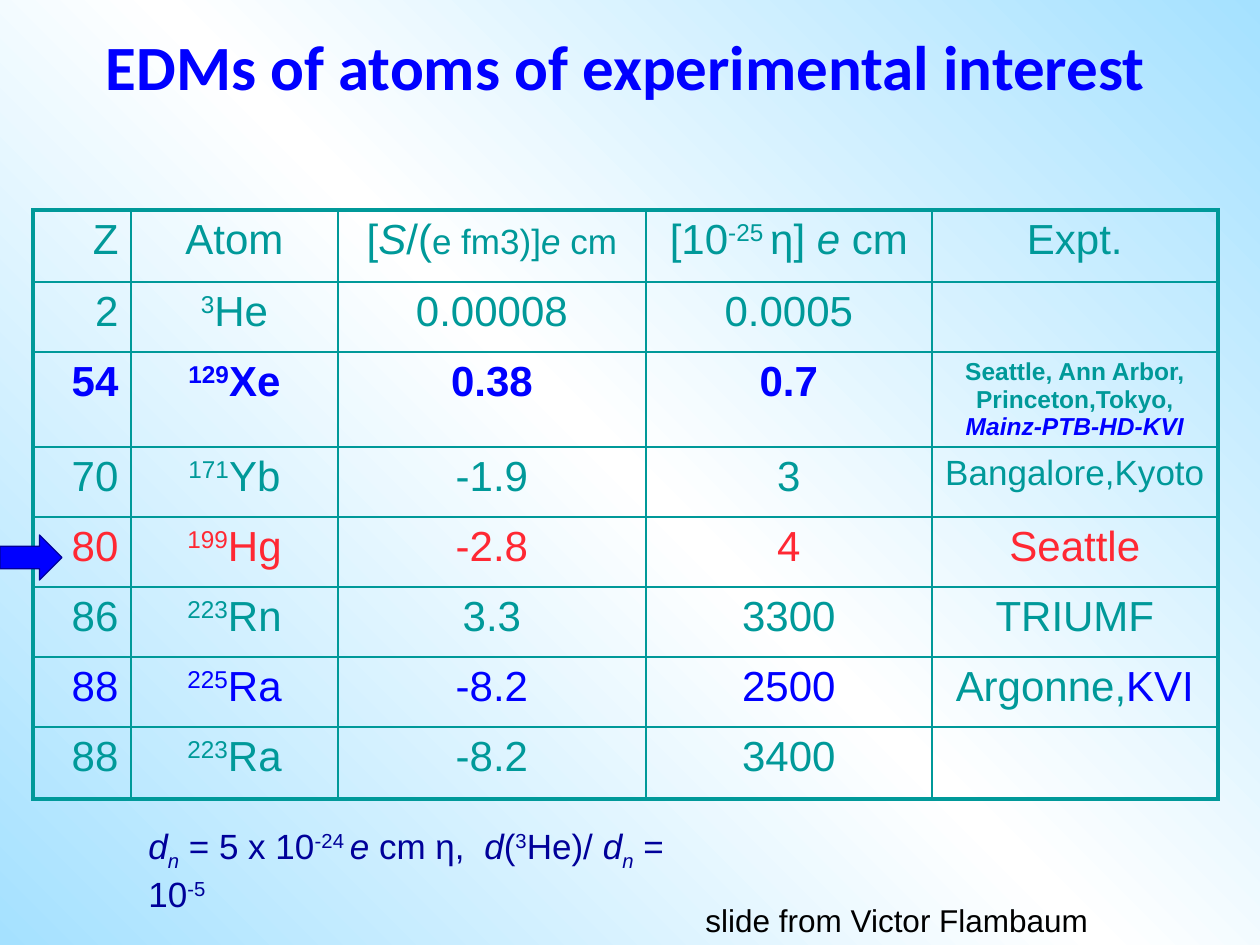
from copy import deepcopy
from dataclasses import dataclass

from lxml.etree import SubElement
from pptx import Presentation
from pptx.dml.color import RGBColor as Rgb
from pptx.enum.shapes import MSO_SHAPE as Preset
from pptx.enum.text import MSO_ANCHOR as Anchor
from pptx.enum.text import MSO_AUTO_SIZE as Fit
from pptx.enum.text import PP_ALIGN as Align
from pptx.oxml.ns import qn
from pptx.util import Emu, Pt

PX_PER_INCH = 126


def px(length):
    return Emu(round(length * 914400 / PX_PER_INCH))


@dataclass(frozen=True)
class Theme:
    sky: str = "A5E1FF"
    white: str = "FFFFFF"
    teal: str = "009999"
    blue: str = "0000FF"
    navy: str = "000099"
    red: str = "FF2833"
    black: str = "000000"
    heading: str = "Calibri"
    body: str = "Arial"
    title_size: int = 36
    cell_size: int = 24
    small_size: int = 20
    credit_size: int = 18
    tiny_size: int = 14
    grid_line: float = 1
    frame_line: float = 2.25
    arrow_line: float = 0.75


THEME = Theme()
ITALIC = {"italic": True}
SUPER = {"baseline": 30}
SUB = {"italic": True, "baseline": -25}
SMALL = {"size": THEME.small_size}
SMALL_ITALIC = {**SMALL, **ITALIC}


class SlideBuilder:
    def __init__(self, slide, theme):
        self.slide = slide
        self.theme = theme

    def background(self):
        theme = self.theme
        fill = self.slide.background.fill
        fill.gradient()
        fill.gradient_angle = 45
        stop_list = self.slide.element.find(".//" + qn("a:gsLst"))
        stop_list.append(deepcopy(stop_list[-1]))
        shades = (theme.sky, theme.white, theme.sky)
        for stop, position, shade in zip(fill.gradient_stops, (0, 0.5, 1), shades):
            stop.position = position
            stop.color.rgb = Rgb.from_string(shade)

    def add_runs(self, paragraph, runs, **base):
        for words, changes in runs:
            values = {"name": self.theme.body, **base, **changes}
            baseline = values.pop("baseline", 0)
            color = values.pop("color")
            values["size"] = Pt(values["size"])
            run = paragraph.add_run()
            run.text = words
            for attribute, value in values.items():
                setattr(run.font, attribute, value)
            run.font.color.rgb = Rgb.from_string(color)
            if baseline:
                run._r.get_or_add_rPr().set("baseline", str(baseline * 1000))

    def title(self, words, left, top, width, height):
        title = self.slide.shapes.title
        title.left, title.top, title.width, title.height = map(px, (left, top, width, height))
        frame = title.text_frame
        frame.auto_size = Fit.NONE
        frame.vertical_anchor = Anchor.TOP
        paragraph = frame.paragraphs[0]
        paragraph.alignment = Align.CENTER
        paragraph.line_spacing = 0.7
        self.add_runs(paragraph, [(words, {})], name=self.theme.heading,
                      size=self.theme.title_size, color=self.theme.blue, bold=True)

    def text(self, runs, left, top, width, height, **base):
        frame = self.slide.shapes.add_textbox(*map(px, (left, top, width, height))).text_frame
        frame.word_wrap = True
        frame.auto_size = Fit.SHAPE_TO_FIT_TEXT
        self.add_runs(frame.paragraphs[0], runs, **base)

    def borders(self, cell, outer_sides):
        properties = cell._tc.get_or_add_tcPr()
        for side in "LRTB":
            width = self.theme.frame_line if side in outer_sides else self.theme.grid_line
            line = SubElement(properties, qn(f"a:ln{side}"), w=str(Pt(width)))
            color = SubElement(SubElement(line, qn("a:solidFill")), qn("a:srgbClr"))
            color.set("val", self.theme.teal)

    def table(self, rows, left, top, widths, heights):
        area = map(px, (left, top, sum(widths), sum(heights)))
        table = self.slide.shapes.add_table(len(rows), len(widths), *area).table
        table.first_row = table.horz_banding = False
        for column, width in zip(table.columns, widths):
            column.width = px(width)
        for row, height in zip(table.rows, heights):
            row.height = px(height)
        last_row, last_column = len(rows) - 1, len(widths) - 1
        for r, (emphasis, cells) in enumerate(rows):
            for c, runs in enumerate(cells):
                cell = table.cell(r, c)
                edges = {"T": r == 0, "B": r == last_row, "L": c == 0, "R": c == last_column}
                self.borders(cell, [side for side, outer in edges.items() if outer])
                cell.fill.background()
                paragraph = cell.text_frame.paragraphs[0]
                paragraph.alignment = Align.CENTER if c else Align.RIGHT
                base = {"size": self.theme.cell_size, "color": self.theme.teal, **emphasis}
                self.add_runs(paragraph, runs, **base)

    def arrow(self, left, top, width, height):
        arrow = self.slide.shapes.add_shape(
            Preset.RIGHT_ARROW, *map(px, (left, top, width, height)))
        arrow.shadow.inherit = False
        arrow.fill.solid()
        arrow.fill.fore_color.rgb = Rgb.from_string(self.theme.blue)
        arrow.line.color.rgb = Rgb.from_string(self.theme.navy)
        arrow.line.width = Pt(self.theme.arrow_line)


def atom_row(charge, mass, symbol, schiff, eta, sites=(), **emphasis):
    atom = [(mass, SUPER), (symbol, {})]
    return emphasis, [[(charge, {})], atom, [(schiff, {})], [(eta, {})], sites]


HEADER = ({}, [
    [("Z", {})],
    [("Atom", {})],
    [("[", {}), ("S", ITALIC), ("/(", {}), ("e fm3)]", SMALL), ("e", SMALL_ITALIC),
     (" cm", SMALL)],
    [("[10", {}), ("-25 ", SUPER), ("η] ", {}), ("e", ITALIC), (" cm", {})],
    [("Expt.", {})],
])

XENON_SITES = [
    ("Seattle, Ann Arbor, Princeton,Tokyo, ", {"size": THEME.tiny_size, "color": THEME.teal}),
    ("Mainz-PTB-HD-KVI", {"size": THEME.tiny_size, **ITALIC}),
]
RADIUM_SITES = [("Argonne,", {"color": THEME.teal}), ("KVI", {})]

ATOMS = [
    HEADER,
    atom_row("2", "3", "He", "0.00008", "0.0005"),
    atom_row("54", "129", "Xe", "0.38", "0.7", XENON_SITES, color=THEME.blue, bold=True),
    atom_row("70", "171", "Yb", "-1.9", "3", [("Bangalore,Kyoto", SMALL)]),
    atom_row("80", "199", "Hg", "-2.8", "4", [("Seattle", {})], color=THEME.red),
    atom_row("86", "223", "Rn", "3.3", "3300", [("TRIUMF", {})]),
    atom_row("88", "225", "Ra", "-8.2", "2500", RADIUM_SITES, color=THEME.blue),
    atom_row("88", "223", "Ra", "-8.2", "3400"),
]

NEUTRON_EDM = [
    ("d", ITALIC), ("n", SUB), (" = 5 x 10", {}), ("-24 ", SUPER), ("e", ITALIC),
    (" cm η,  ", {}), ("d", ITALIC), ("(", {}), ("3", SUPER), ("He)/ ", {}),
    ("d", ITALIC), ("n", SUB), (" = 10", {}), ("-5", SUPER),
]


def main():
    deck = Presentation()
    deck.slide_width, deck.slide_height = px(1260), px(945)
    builder = SlideBuilder(deck.slides.add_slide(deck.slide_layouts[5]), THEME)
    builder.background()
    builder.title("EDMs of atoms of experimental interest", 73, 42, 1105, 126)
    builder.table(ATOMS, 33, 210, [98, 207, 308, 286, 286], [72, 70, 95, 70, 70, 70, 70, 72])
    builder.text(NEUTRON_EDM, 136, 818, 564, 55, size=THEME.small_size, color=THEME.navy)
    builder.text([("slide from Victor Flambaum", {})], 693, 895, 412, 50,
                 size=THEME.credit_size, color=THEME.black)
    builder.arrow(0, 535, 62, 45)
    deck.save("out.pptx")


if __name__ == "__main__":
    main()
